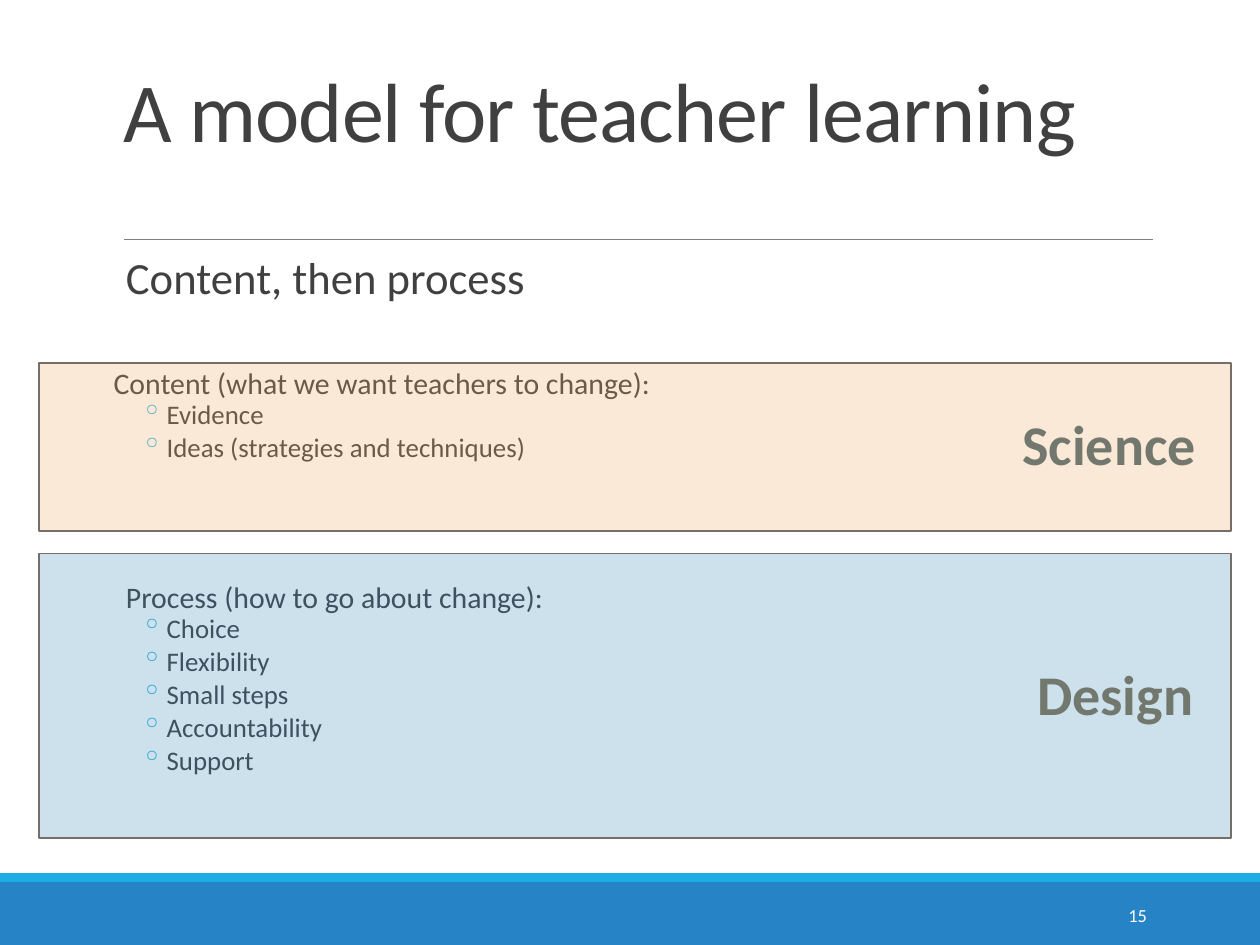
from pptx import Presentation
from pptx.dml.color import RGBColor
from pptx.enum import shapes, text
from pptx.oxml.ns import qn
from pptx.util import Cm, Pt
from lxml import etree

FONT = "Calibri"
INK, ACCENT, LABEL = "404040", "1CADE4", "73786E"
LEFT = 2.29


def rgb(hex_):
    return RGBColor.from_string(hex_)


def add_rect(s, x, y, w, h, fill, line=None, alpha=None):
    sp = s.shapes.add_shape(shapes.MSO_SHAPE.RECTANGLE, Cm(x), Cm(y), Cm(w), Cm(h))
    sp.shadow.inherit = False
    sp.fill.solid()
    sp.fill.fore_color.rgb = rgb(fill)
    if alpha is not None:
        clr = sp._element.spPr.find(qn("a:solidFill"))[0]
        etree.SubElement(clr, qn("a:alpha"), val=str(alpha * 1000))
    if line:
        sp.line.color.rgb = rgb(line)
        sp.line.width = Pt(1)
    else:
        sp.line.fill.background()


def add_frame(s, x, y, w, h, inset=0.0, anchor=text.MSO_ANCHOR.TOP):
    tf = s.shapes.add_textbox(Cm(x), Cm(y), Cm(w), Cm(h)).text_frame
    tf.word_wrap = True
    tf.vertical_anchor = anchor
    tf.margin_left = tf.margin_right = Cm(inset)
    tf.margin_top = tf.margin_bottom = Cm(inset / 2)
    return tf


def add_run(p, words, size, color=INK, bold=False):
    r = p.add_run()
    r.text = words
    r.font.name, r.font.size, r.font.bold = FONT, Pt(size), bold
    r.font.color.rgb = rgb(color)
    return r


def set_spacing(p, before, after, lines=0.7):
    p.space_before, p.space_after, p.line_spacing = Pt(before), Pt(after), lines


def set_indent(p, left, hanging=0.0, bullet=None):
    pPr = p._p.get_or_add_pPr()
    pPr.set("marL", str(Cm(left)))
    pPr.set("indent", str(Cm(-hanging)))
    if bullet:
        clr = etree.SubElement(pPr, qn("a:buClr"))
        etree.SubElement(clr, qn("a:srgbClr"), val=ACCENT)
        etree.SubElement(pPr, qn("a:buChar"), char=bullet)


def add_header(s, x, y, w):
    tf = add_frame(s, x, y, w, 2.49, 0.25, text.MSO_ANCHOR.BOTTOM)
    p = tf.paragraphs[0]
    p.line_spacing = 0.85
    r = add_run(p, "A model for teacher learning", 48)
    r._r.get_or_add_rPr().set("spc", "-50")
    ln = s.shapes.add_connector(shapes.MSO_CONNECTOR.STRAIGHT,
                                Cm(x + 0.25), Cm(y + 3.97), Cm(x + w + 0.05), Cm(y + 3.97))
    ln.line.color.rgb = rgb("808080")
    ln.line.width = Pt(0.5)
    etree.SubElement(ln._element.spPr, qn("a:effectLst"))
    p = add_frame(s, LEFT, y + 4.47, w, 1).paragraphs[0]
    set_spacing(p, 0, 2)
    set_indent(p, 0.25)
    add_run(p, "Content, then process", 25.5)


def add_band(s, x, y, w, h, fill, heading, indent, items, text_dy, label, label_dy, label_gap):
    """Lay a tinted band over a heading with bullets, with a label at its right."""
    tf = add_frame(s, LEFT, y + text_dy, 15, h - text_dy)
    p = tf.paragraphs[0]
    set_spacing(p, 0, 2)
    set_indent(p, indent)
    add_run(p, heading, 17)
    for item in items:
        p = tf.add_paragraph()
        set_spacing(p, 2, 4)
        set_indent(p, 1.07, 0.51, "◦")
        add_run(p, item, 15.3)
    add_rect(s, x, y, w, h, fill, "786E69", 25)
    label_w = 4.75
    p = add_frame(s, x + w - label_gap - label_w, y + label_dy,
                  label_w, 1.6, 0.25).paragraphs[0]
    p.alignment = text.PP_ALIGN.RIGHT
    add_run(p, label, 32, LABEL, True)


def add_footer(s, y, w, h, number):
    add_rect(s, 0, y, w, h, "2683C6")
    add_rect(s, 0, y - 0.18, w, 0.18, ACCENT)
    p = add_frame(s, 20.62, y + 0.16, 2.75, 1.02, 0.25,
                  text.MSO_ANCHOR.MIDDLE).paragraphs[0]
    p.alignment = text.PP_ALIGN.RIGHT
    add_run(p, number, 10.5, "FFFFFF")


def main():
    prs = Presentation()
    prs.slide_width, prs.slide_height = Cm(25.4), Cm(19.05)
    s = prs.slides.add_slide(prs.slide_layouts[6])
    add_footer(s, 17.78, 25.4, 1.27, "15")
    add_header(s, 2.24, 0.86, 20.96)
    add_band(s, 0.79, 7.32, 24.03, 3.38, "EDAA61",
             "Content (what we want teachers to change):", 0,
             ["Evidence", "Ideas (strategies and techniques)"],
             0.23, "Science", 0.82, 0.46)
    add_band(s, 0.79, 11.16, 24.03, 5.74, "3488B6",
             "Process (how to go about change):", 0.25,
             ["Choice", "Flexibility", "Small steps", "Accountability", "Support"],
             0.7, "Design", 2.01, 0.51)
    prs.save("out.pptx")


if __name__ == "__main__":
    main()
